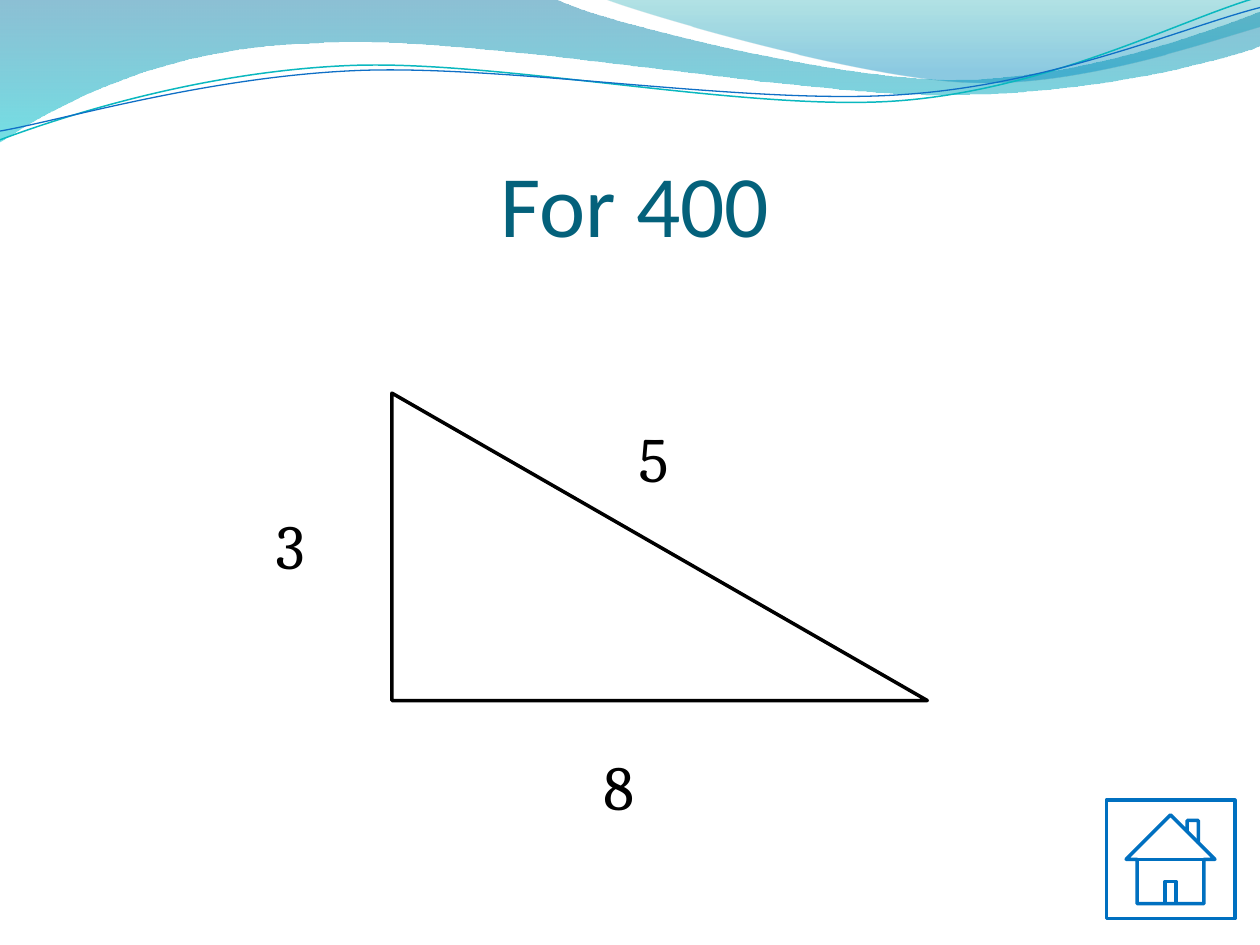
from math import cos, radians, sin

from lxml.etree import Element, SubElement
from pptx import Presentation
from pptx.dml.color import RGBColor
from pptx.enum.shapes import MSO_SHAPE as Shape
from pptx.enum.text import MSO_ANCHOR as Anchor, MSO_AUTO_SIZE as AutoSize, PP_ALIGN as Align
from pptx.oxml.ns import qn
from pptx.util import Inches, Pt

BLACK = RGBColor(0x00, 0x00, 0x00)
TITLE_TEAL = RGBColor(0x04, 0x61, 0x7B)
HOME_BLUE = RGBColor(0x00, 0x70, 0xC0)
DEEP_BLUE = RGBColor(0x00, 0x74, 0xA1)
AQUA = RGBColor(0x00, 0xC6, 0xCF)
SEA_GREEN = RGBColor(0x00, 0xA1, 0xA9)
SKY_BLUE = RGBColor(0x00, 0x8B, 0xBF)
LINE_TEAL = RGBColor(0x0A, 0xB8, 0xBF)
LINE_BLUE = RGBColor(0x0F, 0x6F, 0xC6)

LINE_TILT = -2.7
LINE_PIVOT = (4.99, 0.58)

# Each wave is a start point followed by line ends (x, y) and
# Bezier segments (x1, y1, x2, y2, x, y), in inches.
# Bands add gradient stops: (position, colour, opacity in percent).
WAVE_BANDS = [
    ([(0, 0), (4.4, -0.01), (4.76, 0.17, 6.64, 0.63, 7.58, 0.63),
      (8.53, 0.63, 9.58, 0.26, 10, 0.09), (10.01, 0.36),
      (9.83, 0.44, 8.7, 0.76, 7.46, 0.75), (6.22, 0.75, 3.82, 0.28, 2.57, 0.34),
      (1.29, 0.36, 0.46, 0.83, -0.01, 1.13)],
     [(0, DEEP_BLUE, 45), (1, AQUA, 55)]),
    ([(4.79, -0.01), (5.09, 0.11, 6.82, 0.62, 7.69, 0.65),
      (8.56, 0.69, 9.61, 0.32, 10, 0.21), (10, 0)],
     [(0, SEA_GREEN, 30), (0.8, SKY_BLUE, 45)]),
]
WAVE_LINES = [
    ([(0, 1.11), (0.48, 0.93, 1.58, 0.57, 2.77, 0.52),
      (3.95, 0.47, 5.93, 0.89, 7.13, 0.8), (8.33, 0.71, 9.38, 0.15, 9.98, -0.02)],
     LINE_TEAL, 0.85),
    ([(0, 1.04), (0.47, 0.96, 1.64, 0.61, 2.83, 0.56),
      (4.03, 0.51, 5.97, 0.84, 7.17, 0.75), (8.36, 0.67, 9.41, 0.21, 10, 0.06)],
     LINE_BLUE, 0.75),
]


def set_all(target, formats):
    for name, value in formats.items():
        setattr(target, name, value)


def turn(point, degrees):
    """Rotate a point clockwise about the pivot of the wave lines."""
    angle = radians(degrees)
    dx, dy = point[0] - LINE_PIVOT[0], point[1] - LINE_PIVOT[1]
    return (LINE_PIVOT[0] + dx * cos(angle) - dy * sin(angle),
            LINE_PIVOT[1] + dx * sin(angle) + dy * cos(angle))


def bend(wave, segments):
    """Merge the three straight steps of each Bezier segment into one curve."""
    steps = iter(list(wave._element.iter(qn("a:lnTo"))))
    for segment in segments[1:]:
        step = next(steps)
        if len(segment) == 6:
            curve = Element(qn("a:cubicBezTo"))
            step.addprevious(curve)
            for part in (step, next(steps), next(steps)):
                curve.append(part[0])
                part.getparent().remove(part)


def add_wave(slide, left, top, segments, closed, tilt=0):
    points = [turn(pair, -tilt) for segment in segments
              for pair in zip(segment[::2], segment[1::2])]
    points = [(left + Inches(x), top + Inches(y)) for x, y in points]
    builder = slide.shapes.build_freeform(*points[0])
    builder.add_line_segments(points[1:], close=closed)
    wave = builder.convert_to_shape()
    bend(wave, segments)
    wave.rotation = tilt
    wave.shadow.inherit = False
    return wave


def fill_downward(shape, stops):
    """Fill with a top-to-bottom gradient of translucent colours."""
    shape.fill.gradient()
    shape.fill.gradient_angle = 270
    for stop, (position, color, _) in zip(shape.fill.gradient_stops, stops):
        stop.position = position
        stop.color.rgb = color
    for node, (_, _, opacity) in zip(shape._element.spPr.iter(qn("a:srgbClr")), stops):
        SubElement(node, qn("a:alpha")).set("val", str(opacity * 1000))


def outline(shape, color, width):
    shape.shadow.inherit = False
    shape.fill.background()
    shape.line.color.rgb = color
    shape.line.width = Pt(width)


def add_wave_header(slide, left, top):
    for segments, stops in WAVE_BANDS:
        band = add_wave(slide, left, top, segments, True)
        fill_downward(band, stops)
        band.line.fill.background()
    for segments, color, width in WAVE_LINES:
        outline(add_wave(slide, left, top, segments, False, LINE_TILT), color, width)


def add_text(slide, box, text, color, frame_formats, font_formats, align=Align.LEFT):
    frame = slide.shapes.add_textbox(*box).text_frame
    set_all(frame, {"word_wrap": True, **frame_formats})
    paragraph = frame.paragraphs[0]
    paragraph.alignment = align
    run = paragraph.add_run()
    run.text = text
    set_all(run.font, font_formats)
    run.font.color.rgb = color


def add_title(slide, box, text):
    add_text(slide, box, text, TITLE_TEAL,
             {"vertical_anchor": Anchor.BOTTOM, "margin_left": 0, "margin_top": Inches(0.05),
              "margin_right": 0, "margin_bottom": 0},
             {"name": "Calibri", "size": Pt(50)}, Align.CENTER)


def add_triangle(slide, left, top, width, height):
    """Draw the right triangle with the length of each side beside it."""
    triangle = slide.shapes.add_shape(Shape.RIGHT_TRIANGLE, left, top, width, height)
    outline(triangle, BLACK, 2)
    side_labels = [("3", -1.02, 0.85), ("8", 1.58, 2.76), ("5", 1.86, 0.16)]
    for length, dx, dy in side_labels:
        box = (left + Inches(dx), top + Inches(dy), Inches(0.87), Inches(0.71))
        add_text(slide, box, length, BLACK, {"auto_size": AutoSize.SHAPE_TO_FIT_TEXT},
                 {"name": "Cambria", "size": Pt(36)})


def add_home_button(slide, *box):
    outline(slide.shapes.add_shape(Shape.ACTION_BUTTON_HOME, *box), HOME_BLUE, 2)


def main():
    deck = Presentation()
    deck.slide_width, deck.slide_height = Inches(10), Inches(7.5)
    slide = deck.slides.add_slide(deck.slide_layouts[6])
    add_wave_header(slide, Inches(0), Inches(0))
    add_home_button(slide, Inches(8.78), Inches(6.35), Inches(1.02), Inches(0.94))
    add_title(slide, (Inches(0.5), Inches(0.77), Inches(9.08), Inches(1.25)), "For 400")
    add_triangle(slide, Inches(3.11), Inches(3.12), Inches(4.25), Inches(2.44))
    deck.save("out.pptx")


if __name__ == "__main__":
    main()
